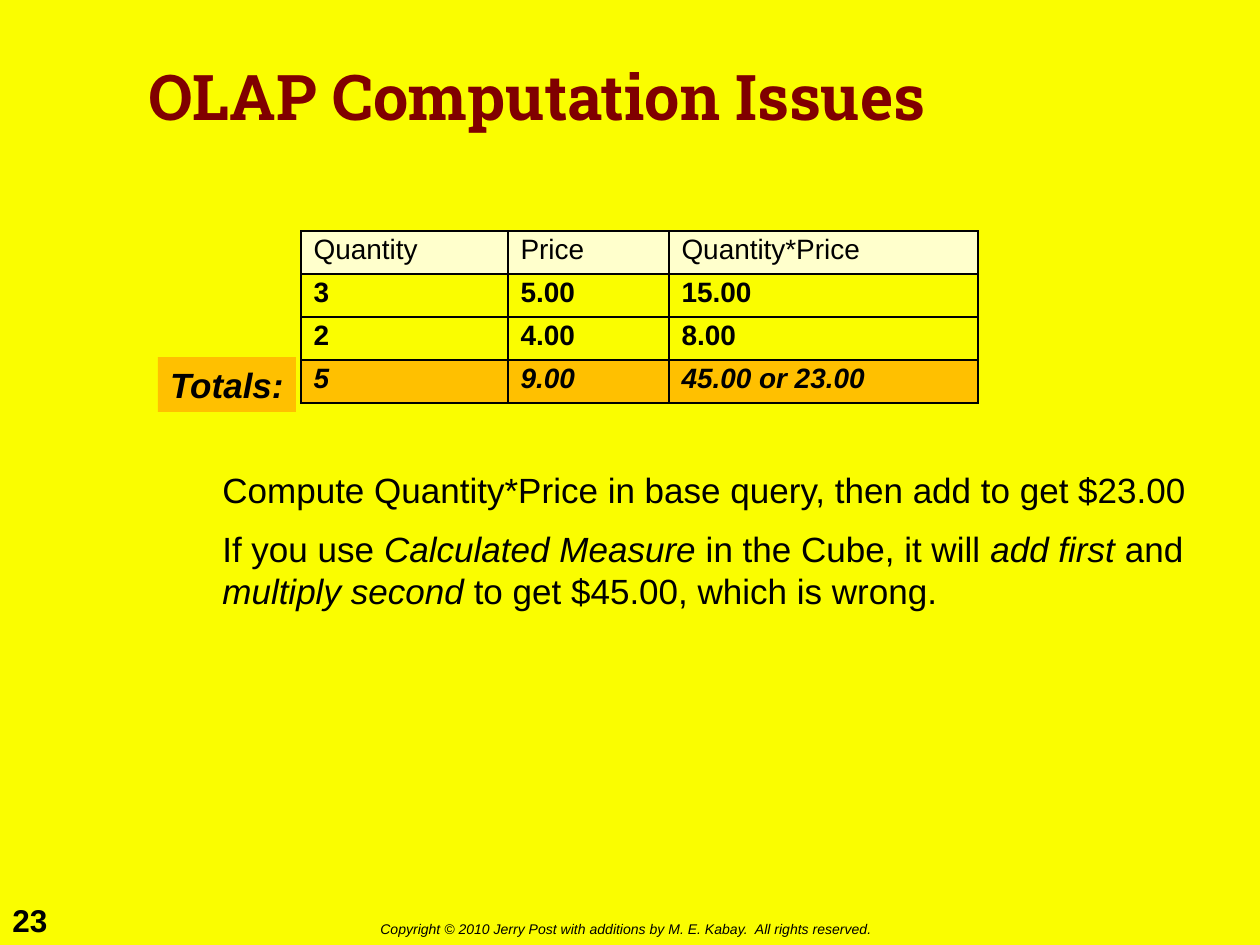
from dataclasses import dataclass
from typing import Optional

from lxml.etree import SubElement
from pptx import Presentation
from pptx.dml.color import RGBColor
from pptx.enum.shapes import MSO_SHAPE
from pptx.enum.text import MSO_ANCHOR, PP_ALIGN
from pptx.oxml.ns import qn
from pptx.util import Emu, Pt

PX_PER_INCH = 126
BLACK = "000000"
ORANGE = "FFC000"


@dataclass
class Box:
    left: int
    top: int
    width: int
    height: int

    def emu(self) -> list[Emu]:
        return [px(v) for v in (self.left, self.top, self.width, self.height)]


@dataclass
class Row:
    values: list[str]
    fill: Optional[str] = None
    bold: bool = True
    italic: bool = False


def px(n: int) -> Emu:
    return Emu(round(n * 914400 / PX_PER_INCH))


def rgb(color: str) -> RGBColor:
    return RGBColor.from_string(color)


def add_run(p, text: str, *, size: int, font: str = "Arial", color: str = BLACK,
            bold: bool = False, italic: bool = False) -> None:
    r = p.add_run()
    r.text = text
    r.font.name, r.font.size = font, Pt(size)
    r.font.bold, r.font.italic = bold, italic
    r.font.color.rgb = rgb(color)


def add_text(s, box: Box, text: str, *, wrap: bool = False, anchor=MSO_ANCHOR.TOP,
             spacing: Optional[float] = None, **fmt) -> None:
    tf = s.shapes.add_textbox(*box.emu()).text_frame
    tf.word_wrap, tf.vertical_anchor = wrap, anchor
    p = tf.paragraphs[0]
    p.line_spacing = spacing
    add_run(p, text, **fmt)


def add_borders(cell) -> None:
    tc_pr = cell._tc.get_or_add_tcPr()
    for side in ("a:lnL", "a:lnR", "a:lnT", "a:lnB"):
        ln = SubElement(tc_pr, qn(side), w=str(Pt(1)))
        SubElement(SubElement(ln, qn("a:solidFill")), qn("a:srgbClr"), val=BLACK)


def add_grid(s, left: int, top: int, widths: list[int], row_height: int,
             rows: list[Row]) -> None:
    box = Box(left, top, sum(widths), row_height * len(rows))
    table = s.shapes.add_table(len(rows), len(widths), *box.emu()).table
    table.first_row = table.horz_banding = False
    for column, width in zip(table.columns, widths):
        column.width = px(width)
    for i, row in enumerate(rows):
        table.rows[i].height = px(row_height)
        for j, value in enumerate(row.values):
            cell = table.cell(i, j)
            add_borders(cell)
            if row.fill:
                cell.fill.solid()
                cell.fill.fore_color.rgb = rgb(row.fill)
            else:
                cell.fill.background()
            p = cell.text_frame.paragraphs[0]
            p.line_spacing = 0.9
            add_run(p, value, size=16, bold=row.bold, italic=row.italic)


def add_label(s, box: Box, text: str, fill: str) -> None:
    sp = s.shapes.add_shape(MSO_SHAPE.RECTANGLE, *box.emu())
    sp.shadow.inherit = False
    sp.fill.solid()
    sp.fill.fore_color.rgb = rgb(fill)
    sp.line.fill.background()
    sp.text_frame.word_wrap = False
    p = sp.text_frame.paragraphs[0]
    p.alignment = PP_ALIGN.CENTER
    add_run(p, text, size=20, bold=True, italic=True)


def add_body(s, box: Box, paragraphs: list[list[tuple[str, bool]]]) -> None:
    tf = s.shapes.add_textbox(*box.emu()).text_frame
    tf.word_wrap = True
    for i, runs in enumerate(paragraphs):
        p = tf.add_paragraph() if i else tf.paragraphs[0]
        if i:
            p.space_before = Pt(10)
        for text, italic in runs:
            add_run(p, text, size=20, italic=italic)


def main() -> None:
    prs = Presentation()
    prs.slide_width, prs.slide_height = px(1260), px(945)
    s = prs.slides.add_slide(prs.slide_layouts[6])
    s.background.fill.solid()
    s.background.fill.fore_color.rgb = rgb("FAFD00")

    # Footer
    add_text(s, Box(0, 895, 64, 50), "23", size=18, bold=True)
    add_text(s, Box(368, 914, 532, 30),
             "Copyright © 2010 Jerry Post with additions by M. E. Kabay.  All rights reserved.",
             size=8, italic=True)

    # Title
    add_text(s, Box(136, 21, 987, 158), "OLAP Computation Issues", wrap=True,
             anchor=MSO_ANCHOR.MIDDLE, spacing=0.9,
             size=36, font="Roboto Slab", color="800000", bold=True)

    # Explanation
    add_body(s, Box(210, 462, 1018, 160), [
        [("Compute Quantity*Price in base query, then add to get $23.00", False)],
        [("If you use ", False), ("Calculated Measure", True),
         (" in the Cube, it will ", False), ("add first ", True), ("and ", False),
         ("multiply second ", True), ("to get $45.00, which is wrong.", False)],
    ])

    # Table with its totals label
    add_grid(s, 301, 231, [207, 161, 309], 43, [
        Row(["Quantity", "Price", "Quantity*Price"], fill="FFFFCC", bold=False),
        Row(["3", "5.00", "15.00"]),
        Row(["2", "4.00", "8.00"]),
        Row(["5", "9.00", "45.00 or 23.00"], fill=ORANGE, italic=True),
    ])
    add_label(s, Box(158, 357, 138, 55), "Totals:", ORANGE)

    prs.save("out.pptx")


if __name__ == "__main__":
    main()
